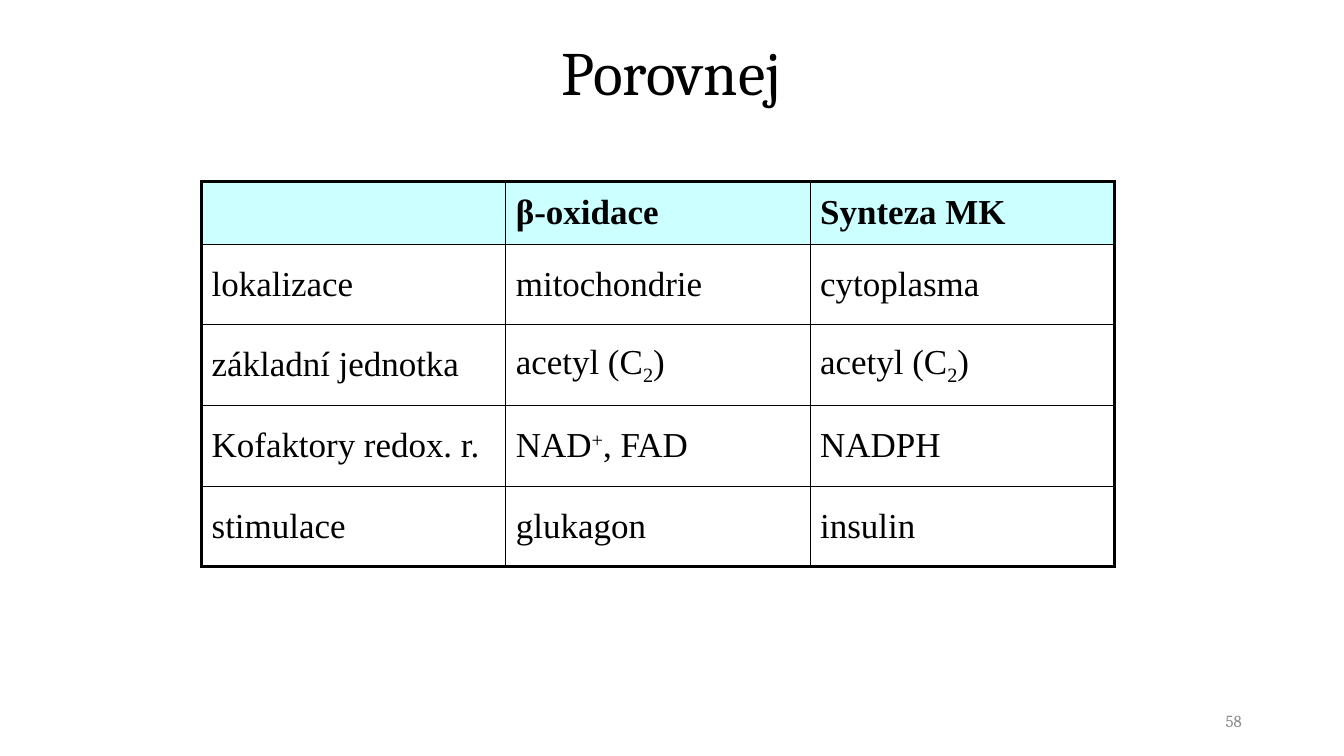
from dataclasses import dataclass

from lxml import etree
from pptx import Presentation
from pptx.dml.color import RGBColor
from pptx.enum import text
from pptx.oxml.ns import qn
from pptx.util import Pt


@dataclass(frozen=True)
class Theme:
    """Colours, fonts and sizes of the slide."""
    ink: str = "000000"
    header: str = "CCFFFF"
    muted: str = "8C8C8C"
    heading_font: str = "Cambria"
    table_font: str = "Times New Roman"
    title_size: float = 44
    table_size: float = 25
    number_size: float = 12
    outer_line: float = 2.25
    inner_line: float = 1


THEME = Theme()
SUBSCRIPT, SUPERSCRIPT = -25000, 30000
ACETYL = [("acetyl (C", 0), ("2", SUBSCRIPT), (")", 0)]
COMPARISON = [
    ["", "β-oxidace", "Synteza MK"],
    ["lokalizace", "mitochondrie", "cytoplasma"],
    ["základní jednotka", ACETYL, ACETYL],
    ["Kofaktory redox. r.",
     [("NAD", 0), ("+", SUPERSCRIPT), (", FAD", 0)], "NADPH"],
    ["stimulace", "glukagon", "insulin"],
]


def style_font(font, name, size, color, bold=False):
    """Apply typeface, size, colour and weight."""
    font.name = name
    font.size = Pt(size)
    font.bold = bold
    font.color.rgb = RGBColor.from_string(color)


def add_label(slide, place, wording, size, color, align, spacing=1.0):
    """Add a single line of heading-font text, centred vertically."""
    frame = slide.shapes.add_textbox(*map(Pt, place)).text_frame
    frame.word_wrap = True
    frame.vertical_anchor = text.MSO_ANCHOR.MIDDLE
    frame.text = wording
    line = frame.paragraphs[0]
    line.alignment = align
    line.line_spacing = spacing
    style_font(line.runs[0].font, THEME.heading_font, size, color)


def set_borders(cell, widths):
    """Draw the four cell borders, given by side and width."""
    properties = cell._tc.get_or_add_tcPr()
    for side, width in widths.items():
        border = etree.SubElement(properties, qn(f"a:ln{side}"), w=str(Pt(width)))
        fill = etree.SubElement(border, qn("a:solidFill"))
        etree.SubElement(fill, qn("a:srgbClr"), val=THEME.ink)


def fill_cell(cell, content, bold):
    """Write plain wording or (wording, baseline) pieces into a cell."""
    cell.vertical_anchor = text.MSO_ANCHOR.MIDDLE
    pieces = [(content, 0)] if isinstance(content, str) else content
    line = cell.text_frame.paragraphs[0]
    for wording, baseline in pieces:
        run = line.add_run()
        run.text = wording
        style_font(run.font, THEME.table_font, THEME.table_size, THEME.ink, bold)
        if baseline:
            run._r.get_or_add_rPr().set("baseline", str(baseline))


def add_comparison(slide, place, rows, header_height):
    """Add the table with a tinted header and a heavier outer frame."""
    row_count, column_count = len(rows), len(rows[0])
    table = slide.shapes.add_table(row_count, column_count, *map(Pt, place)).table
    table.first_row = table.horz_banding = False
    body_height = (place[3] - header_height) / (row_count - 1)
    for r, row in enumerate(rows):
        table.rows[r].height = Pt(body_height if r else header_height)
        for c, content in enumerate(row):
            cell = table.cell(r, c)
            on_edge = {"L": c == 0, "R": c == column_count - 1,
                       "T": r == 0, "B": r == row_count - 1}
            set_borders(cell, {
                side: THEME.outer_line if edge else THEME.inner_line
                for side, edge in on_edge.items()})
            if r == 0:
                cell.fill.solid()
                cell.fill.fore_color.rgb = RGBColor.from_string(THEME.header)
            else:
                cell.fill.background()
            fill_cell(cell, content, bold=r == 0)


def main():
    """Build and save the slide."""
    deck = Presentation()
    deck.slide_width, deck.slide_height = Pt(960), Pt(540)
    slide = deck.slides.add_slide(deck.slide_layouts[6])
    add_label(slide, (173.5, 20, 612, 68), "Porovnej", THEME.title_size,
              THEME.ink, text.PP_ALIGN.CENTER, 0.9)
    add_comparison(slide, (144, 129.5, 652, 275.5), COMPARISON, 45)
    add_label(slide, (678, 500.5, 216, 28.75), "58", THEME.number_size,
              THEME.muted, text.PP_ALIGN.RIGHT)
    deck.save("out.pptx")


if __name__ == "__main__":
    main()
